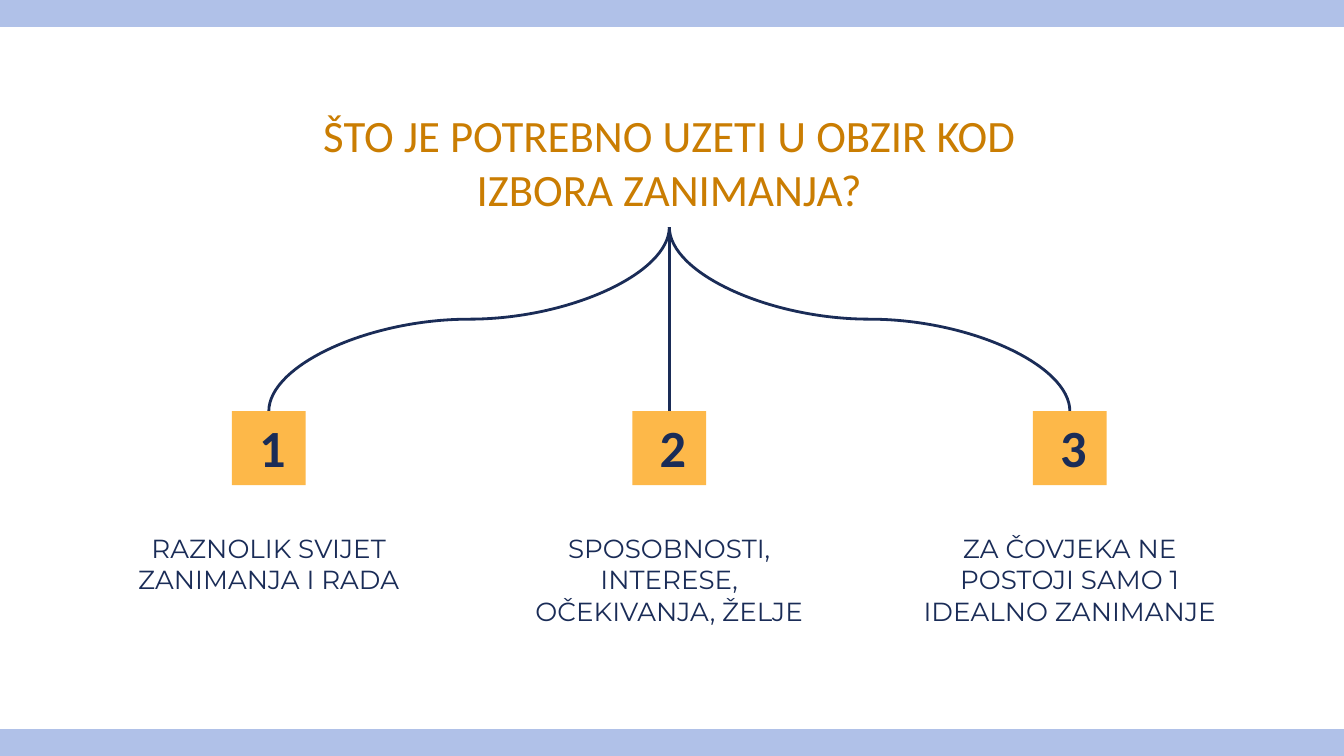
"""Build a slide with a question branching into three numbered answers."""
from lxml import etree
from pptx import Presentation
from pptx import util as u
from pptx.dml.color import RGBColor
from pptx.enum import shapes, text
from pptx.oxml.ns import qn

TITLE = "ŠTO JE POTREBNO UZETI U OBZIR KOD IZBORA ZANIMANJA?"
ANSWERS = [
    "RAZNOLIK SVIJET ZANIMANJA I RADA",
    "SPOSOBNOSTI, INTERESE, OČEKIVANJA, ŽELJE",
    "ZA ČOVJEKA NE POSTOJI SAMO 1 IDEALNO ZANIMANJE",
]
NAVY, ORANGE, OCHRE, BLUE = "1A2C57", "FDB849", "CA7D02", "B0C1E8"
TITLE_FORMAT = {"name": "Calibri", "size": u.Pt(24)}
NUMBER_FORMAT = {"name": "Calibri", "size": u.Pt(28), "bold": True}
ANSWER_FORMAT = {"name": "Montserrat", "size": u.Pt(14)}

WIDTH = 10
HEIGHT = WIDTH * 9 / 16
BAR = 0.19
CENTER, GAP = 4.98, 2.98
BRANCH_TOP, SQUARE_TOP, SQUARE = 1.69, 3.06, 0.55


def paint(color_format, color):
    color_format.rgb = RGBColor.from_string(color)


def add_rectangle(page, left, top, width, height, color, outline=None):
    box = page.shapes.add_shape(
        shapes.MSO_SHAPE.RECTANGLE, *map(u.Inches, (left, top, width, height)))
    box.shadow.inherit = False
    box.fill.solid()
    paint(box.fill.fore_color, color)
    if outline:
        paint(box.line.color, color)
        box.line.width = u.Pt(outline)
    else:
        box.line.fill.background()


def add_label(page, center, top, width, height, words, color, formats, inset):
    box = page.shapes.add_textbox(
        *map(u.Inches, (center - width / 2, top, width, height)))
    frame = box.text_frame
    frame.word_wrap = True
    for side in ("top", "bottom"):
        setattr(frame, f"margin_{side}", u.Inches(inset))
    para = frame.paragraphs[0]
    para.alignment = text.PP_ALIGN.CENTER
    span = para.add_run()
    span.text = words
    paint(span.font.color, color)
    for name, value in formats.items():
        setattr(span.font, name, value)


def add_branch(page, end):
    """Draw a curve that leaves and arrives vertically, as a turned connector."""
    drop, reach = SQUARE_TOP - BRANCH_TOP, abs(end - CENTER)
    middle_x, middle_y = (CENTER + end) / 2, (BRANCH_TOP + SQUARE_TOP) / 2
    side = -1 if end < CENTER else 1
    branch = page.shapes.add_connector(
        shapes.MSO_CONNECTOR.CURVE,
        *map(u.Inches, (middle_x + side * drop / 2, middle_y - reach / 2,
                        middle_x - side * drop / 2, middle_y + reach / 2)))
    paint(branch.line.color, NAVY)
    branch.line.width = u.Pt(1.5)
    properties = branch._element.spPr
    turn = 90 if side < 0 else 270
    properties.find(qn("a:xfrm")).set("rot", str(turn * 60000))
    etree.SubElement(properties, qn("a:effectLst"))


def main():
    deck = Presentation()
    deck.slide_width, deck.slide_height = u.Inches(WIDTH), u.Inches(HEIGHT)
    page = deck.slides.add_slide(deck.slide_layouts[6])

    centers = [CENTER + (index - 1) * GAP for index in range(len(ANSWERS))]
    for center in centers:
        add_branch(page, center)
    for number, (center, answer) in enumerate(zip(centers, ANSWERS), 1):
        add_rectangle(page, center - SQUARE / 2, SQUARE_TOP, SQUARE, SQUARE, ORANGE)
        add_label(page, center, 3.86, 2.46, 0.55, answer, NAVY, ANSWER_FORMAT, 0.1)
        add_label(page, center, 3.04, 0.34, 0.57, str(number), NAVY, NUMBER_FORMAT, 0.05)
    add_label(page, CENTER, 0.7, 5.57, 0.74, TITLE, OCHRE, TITLE_FORMAT, 0.1)
    for top in (0, HEIGHT - BAR):
        add_rectangle(page, 0, top, WIDTH, BAR, BLUE, 2)

    deck.save("out.pptx")


if __name__ == "__main__":
    main()
